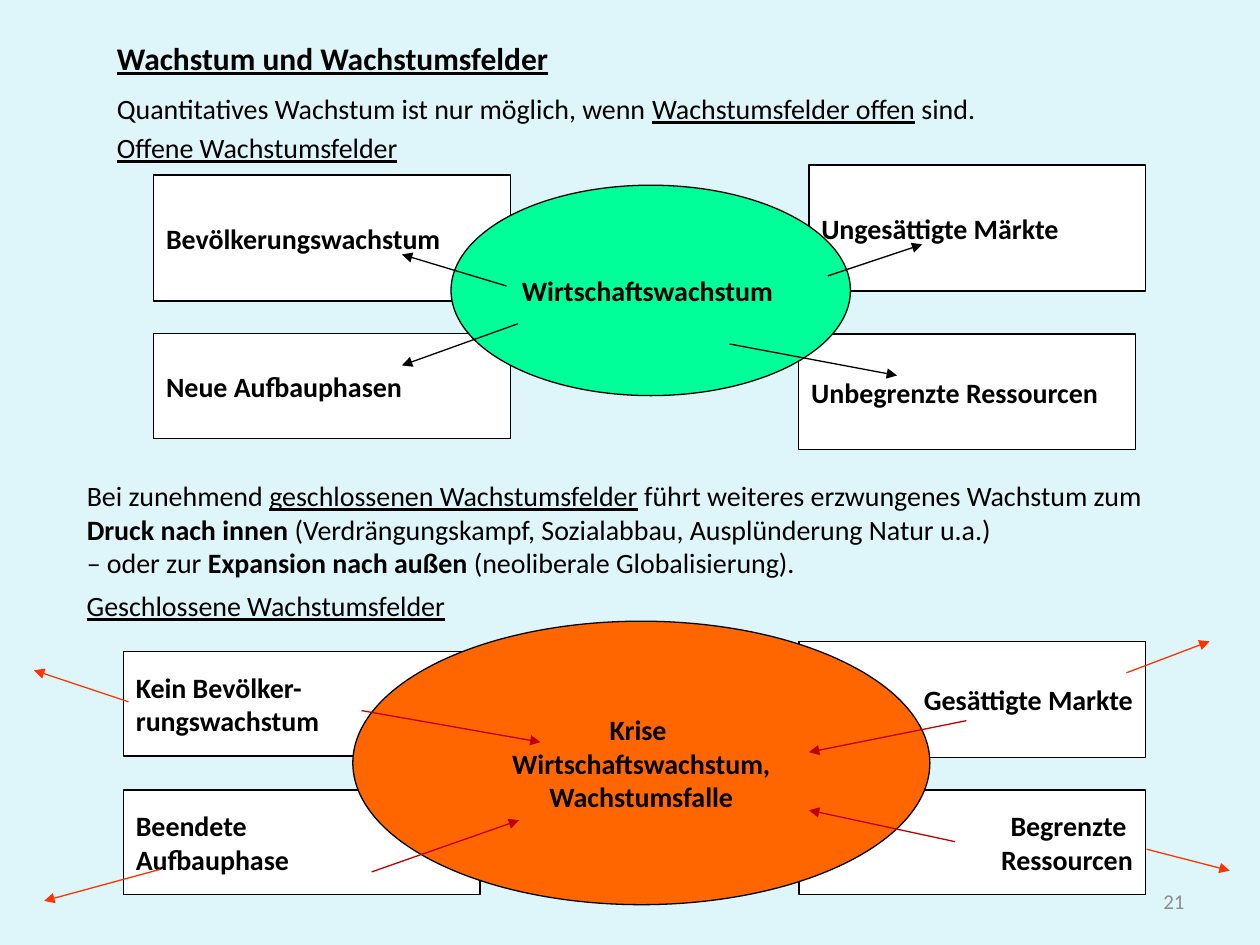
from dataclasses import dataclass
from typing import NamedTuple

from lxml import etree
from pptx import Presentation
from pptx.dml.color import RGBColor
from pptx.enum import shapes, text
from pptx.oxml.ns import qn
from pptx.util import Inches, Pt

LEFT, CENTER, RIGHT = text.PP_ALIGN.LEFT, text.PP_ALIGN.CENTER, text.PP_ALIGN.RIGHT
TOP, MIDDLE = text.MSO_ANCHOR.TOP, text.MSO_ANCHOR.MIDDLE
RECT, OVAL = shapes.MSO_SHAPE.RECTANGLE, shapes.MSO_SHAPE.OVAL


@dataclass(frozen=True)
class Theme:
    font: str = "Calibri"
    title: int = 18
    body: int = 16
    number: int = 12
    line: float = 0.75
    background: str = "DEF5FA"
    ink: str = "000000"
    muted: str = "8C8C8C"
    field: str = "FFFFFF"
    growth: str = "00FF99"
    crisis: str = "FF6600"
    inward: str = "C00000"
    outward: str = "FF3300"


THEME = Theme()


class Run(NamedTuple):
    text: str
    bold: bool = False
    underline: bool = False
    size: int = THEME.body
    color: str = THEME.ink


class Box(NamedTuple):
    left: float
    top: float
    width: float
    height: float


class Label(NamedTuple):
    box: Box
    runs: list[Run]
    align: text.PP_ALIGN = LEFT
    anchor: text.MSO_ANCHOR = TOP


class Node(NamedTuple):
    box: Box
    lines: list[str]
    align: text.PP_ALIGN = LEFT
    shape: shapes.MSO_SHAPE = RECT
    fill: str = THEME.field


class Arrow(NamedTuple):
    x1: float
    y1: float
    x2: float
    y2: float
    color: str = THEME.ink


LABELS = [
    Label(Box(7.17, 6.95, 2.33, 0.4),
          [Run("21", size=THEME.number, color=THEME.muted)], RIGHT, MIDDLE),
    Label(Box(0.83, 0.21, 5.83, 0.5),
          [Run("Wachstum und Wachstumsfelder", True, True, THEME.title)], LEFT, MIDDLE),
    Label(Box(0.83, 0.68, 7.58, 0.37),
          [Run("Quantitatives Wachstum ist nur möglich, wenn "),
           Run("Wachstumsfelder offen", underline=True), Run(" sind.")]),
    Label(Box(0.83, 0.99, 2.75, 0.37), [Run("Offene Wachstumsfelder", underline=True)]),
    Label(Box(0.59, 3.75, 9.08, 0.91),
          [Run("Bei zunehmend "), Run("geschlossenen Wachstumsfelder", underline=True),
           Run(" führt weiteres erzwungenes Wachstum zum "),
           Run("Druck nach innen ", bold=True),
           Run("(Verdrängungskampf, Sozialabbau, Ausplünderung Natur u.a.)\n– oder zur "),
           Run("Expansion nach außen ", bold=True), Run("(neoliberale Globalisierung).")]),
    Label(Box(0.59, 4.62, 3.33, 0.37),
          [Run("Geschlossene Wachstumsfelder", underline=True)]),
]

NODES = [
    Node(Box(1.22, 1.39, 2.83, 1), ["Bevölkerungswachstum"]),
    Node(Box(6.42, 1.31, 2.67, 1), ["Ungesättigte Märkte"]),
    Node(Box(1.22, 2.65, 2.83, 0.83), ["Neue Aufbauphasen"]),
    Node(Box(6.34, 2.65, 2.67, 0.92), ["Unbegrenzte Ressourcen"]),
    Node(Box(3.58, 1.47, 3.17, 1.67), ["Wirtschaftswachstum"], LEFT, OVAL, THEME.growth),
    Node(Box(0.98, 5.17, 2.75, 0.83), ["Kein Bevölker-", "rungswachstum"]),
    Node(Box(0.98, 6.27, 2.83, 0.83), ["Beendete", "Aufbauphase"]),
    Node(Box(6.34, 5.09, 2.75, 0.92), ["Gesättigte Markte"], RIGHT),
    Node(Box(6.34, 6.27, 2.75, 0.83), ["Begrenzte ", "Ressourcen"], RIGHT),
    Node(Box(2.8, 4.93, 4.58, 2.25), ["Krise ", "Wirtschaftswachstum,\nWachstumsfalle"],
         CENTER, OVAL, THEME.crisis),
]

ARROWS = [
    Arrow(4.02, 2.27, 3.19, 2.02),
    Arrow(6.57, 2.19, 7.32, 1.94),
    Arrow(4.11, 2.57, 3.19, 2.9),
    Arrow(5.79, 2.73, 7.12, 2.98),
    Arrow(2.87, 5.64, 4.29, 5.89, THEME.inward),
    Arrow(2.95, 6.92, 4.12, 6.51, THEME.inward),
    Arrow(7.67, 5.72, 6.42, 5.97, THEME.inward),
    Arrow(7.58, 6.68, 6.42, 6.43, THEME.inward),
    Arrow(1.02, 5.57, 0.27, 5.32, THEME.outward),
    Arrow(8.94, 5.34, 9.6, 5.09, THEME.outward),
    Arrow(9.1, 6.74, 9.76, 6.91, THEME.outward),
    Arrow(1.27, 6.9, 0.35, 7.15, THEME.outward),
]


def rgb(value: str) -> RGBColor:
    return RGBColor.from_string(value)


def add_run(p, run: Run) -> None:
    """Add a run to the paragraph, with a line break at each newline."""
    for i, part in enumerate(run.text.split("\n")):
        if i:
            p.add_line_break()
        r = p.add_run()
        r.text = part
        r.font.name = THEME.font
        r.font.size = Pt(run.size)
        r.font.bold = run.bold
        r.font.underline = run.underline
        r.font.color.rgb = rgb(run.color)


def fill_text(tf, paragraphs: list[list[Run]], align, anchor, wrap: bool) -> None:
    tf.word_wrap = wrap
    tf.vertical_anchor = anchor
    for i, runs in enumerate(paragraphs):
        p = tf.add_paragraph() if i else tf.paragraphs[0]
        p.alignment = align
        for run in runs:
            add_run(p, run)


def draw_label(s, label: Label) -> None:
    sp = s.shapes.add_textbox(*map(Inches, label.box))
    fill_text(sp.text_frame, [label.runs], label.align, label.anchor, True)


def draw_node(s, node: Node) -> None:
    sp = s.shapes.add_shape(node.shape, *map(Inches, node.box))
    sp.shadow.inherit = False
    sp.fill.solid()
    sp.fill.fore_color.rgb = rgb(node.fill)
    sp.line.color.rgb = rgb(THEME.ink)
    sp.line.width = Pt(THEME.line)
    paragraphs = [[Run(line, bold=True)] for line in node.lines]
    fill_text(sp.text_frame, paragraphs, node.align, MIDDLE, False)


def draw_arrow(s, arrow: Arrow) -> None:
    ends = map(Inches, arrow[:4])
    cx = s.shapes.add_connector(shapes.MSO_CONNECTOR.STRAIGHT, *ends)
    cx.line.color.rgb = rgb(arrow.color)
    cx.line.width = Pt(THEME.line)
    etree.SubElement(cx.line._get_or_add_ln(), qn("a:tailEnd"), type="triangle")
    etree.SubElement(cx._element.spPr, qn("a:effectLst"))


def main() -> None:
    prs = Presentation()
    prs.slide_width, prs.slide_height = Inches(10), Inches(7.5)
    s = prs.slides.add_slide(prs.slide_layouts[6])
    s.background.fill.solid()
    s.background.fill.fore_color.rgb = rgb(THEME.background)
    for label in LABELS:
        draw_label(s, label)
    for node in NODES:
        draw_node(s, node)
    for arrow in ARROWS:
        draw_arrow(s, arrow)
    prs.save("out.pptx")


if __name__ == "__main__":
    main()
